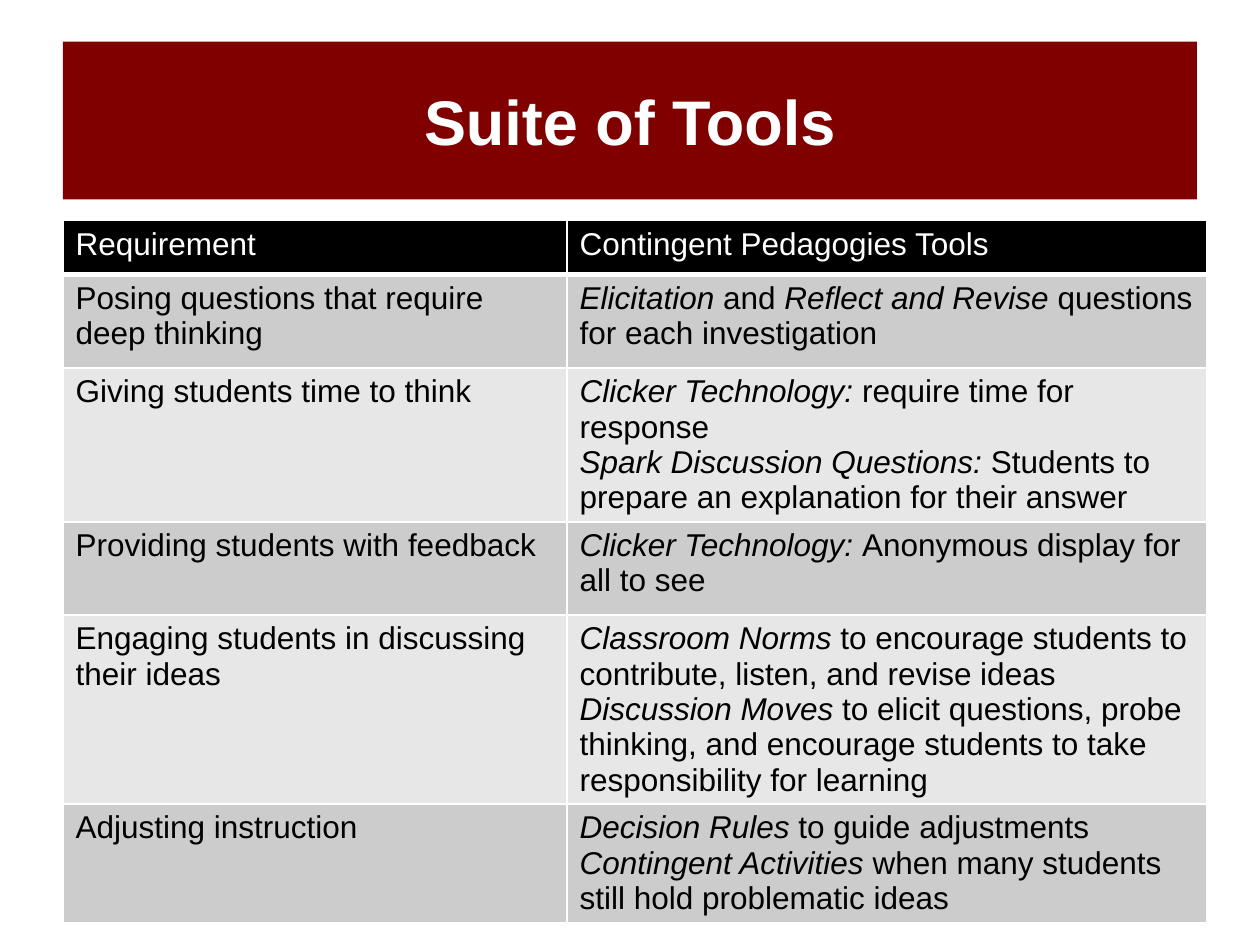
import pptx
import pptx.dml.color
import pptx.enum.shapes
import pptx.enum.text
import pptx.oxml
import pptx.oxml.ns
import pptx.util

Cm = pptx.util.Cm
Pt = pptx.util.Pt
RGB = pptx.dml.color.RGBColor

MAROON = RGB(0x80, 0x00, 0x00)
WHITE = RGB(0xFF, 0xFF, 0xFF)
BLACK = RGB(0x00, 0x00, 0x00)
DARK = RGB(0xCC, 0xCC, 0xCC)
LIGHT = RGB(0xE7, 0xE7, 0xE7)

TITLE = {"name": "Arial", "size": Pt(36), "bold": True}
BODY = {"name": "Arial", "size": Pt(18), "bold": False}

COLS = (10.16, 12.9)
ROWS = (1.09, 1.88, 2.9, 1.88, 3.58, 2.24)
HEADS = ("Requirement", "Contingent Pedagogies Tools")
TOOLS = (
    ("Posing questions that require deep thinking",
     [("Elicitation ", "and ", "Reflect and Revise ",
       "questions for each investigation")]),
    ("Giving students time to think",
     [("Clicker Technology: ", "require time for response"),
      ("Spark Discussion Questions:",
       " Students to prepare an explanation for their answer")]),
    ("Providing students with feedback",
     [("Clicker Technology: ", "Anonymous display for all to see")]),
    ("Engaging students in discussing their ideas",
     [("Classroom Norms ",
       "to encourage students to contribute, listen, and revise ideas"),
      ("Discussion Moves ",
       "to elicit questions, probe thinking, and encourage students "
       "to take responsibility for learning")]),
    ("Adjusting instruction",
     [("Decision Rules ", "to guide adjustments"),
      ("Contingent Activities ",
       "when many students still hold problematic ideas")]),
)


def add_run(para, text, look, color, slant=False):
    """Add a run with the given font values."""
    run = para.add_run()
    run.text = text
    for key, value in {**look, "italic": slant}.items():
        setattr(run.font, key, value)
    run.font.color.rgb = color


def add_edges(cell, base):
    """Draw white edges round a cell, with its own bottom width."""
    props = cell._tc.get_or_add_tcPr()
    widths = {"L": 1, "R": 1, "T": 1, "B": base}
    for spot, (side, width) in enumerate(widths.items()):
        props.insert(spot, pptx.oxml.parse_xml(
            f'<a:ln{side} {pptx.oxml.ns.nsdecls("a")} w="{Pt(width)}">'
            f'<a:solidFill><a:srgbClr val="{WHITE}"/></a:solidFill>'
            f'</a:ln{side}>'))


def fill_cell(cell, paras, fill, color, base=1):
    """Fill a cell with paragraphs of alternating italic and plain runs."""
    cell.fill.solid()
    cell.fill.fore_color.rgb = fill
    add_edges(cell, base)
    frame = cell.text_frame
    for row, parts in enumerate(paras):
        para = frame.add_paragraph() if row else frame.paragraphs[0]
        for spot, text in enumerate(parts):
            add_run(para, text, BODY, color, bool(text) and spot % 2 == 0)


def add_title(slide, left, top, width, height):
    """Place the title band in its box."""
    band = slide.shapes.add_shape(
        pptx.enum.shapes.MSO_SHAPE.RECTANGLE, left, top, width, height)
    band.shadow.inherit = False
    band.fill.solid()
    band.fill.fore_color.rgb = MAROON
    band.line.fill.background()
    frame = band.text_frame
    frame.vertical_anchor = pptx.enum.text.MSO_ANCHOR.MIDDLE
    para = frame.paragraphs[0]
    para.alignment = pptx.enum.text.PP_ALIGN.CENTER
    add_run(para, "Suite of Tools", TITLE, WHITE)


def add_grid(slide, left, top):
    """Place the table of requirements and tools."""
    grid = slide.shapes.add_table(
        len(ROWS), len(COLS), left, top,
        Cm(sum(COLS)), Cm(sum(ROWS))).table
    grid.first_row = grid.horz_banding = False
    for col, width in zip(grid.columns, COLS):
        col.width = Cm(width)
    for row, height in zip(grid.rows, ROWS):
        row.height = Cm(height)
    for col, head in enumerate(HEADS):
        fill_cell(grid.cell(0, col), [("", head)], BLACK, WHITE, 3)
    for row, (need, tools) in enumerate(TOOLS, 1):
        fill = DARK if row % 2 else LIGHT
        fill_cell(grid.cell(row, 0), [("", need)], fill, BLACK)
        fill_cell(grid.cell(row, 1), tools, fill, BLACK)


def main():
    """Build the slide and save it."""
    deck = pptx.Presentation()
    deck.slide_width, deck.slide_height = Cm(25.4), Cm(19.05)
    slide = deck.slides.add_slide(deck.slide_layouts[6])
    add_title(slide, Cm(1.27), Cm(0.84), Cm(22.86), Cm(3.18))
    add_grid(slide, Cm(1.27), Cm(4.45))
    deck.save("out.pptx")


if __name__ == "__main__":
    main()
